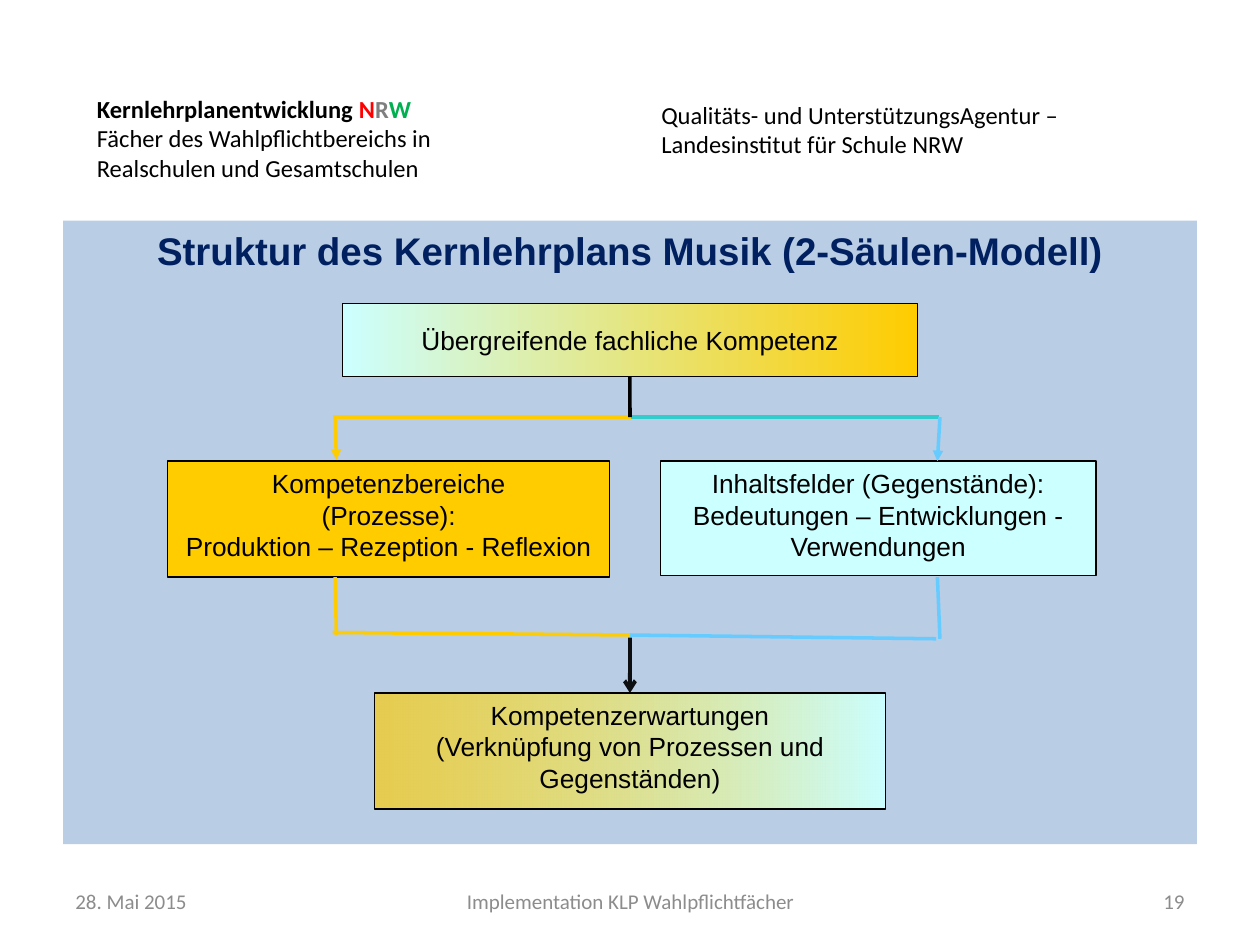
from lxml import etree
from pptx import Presentation
from pptx.dml.color import RGBColor
from pptx.enum.shapes import MSO_CONNECTOR, MSO_SHAPE
from pptx.enum.text import MSO_ANCHOR, PP_ALIGN
from pptx.oxml.ns import qn
from pptx.util import Inches, Pt

STRAIGHT = MSO_CONNECTOR.STRAIGHT
RECT = MSO_SHAPE.RECTANGLE
TOP, MIDDLE = MSO_ANCHOR.TOP, MSO_ANCHOR.MIDDLE
LEFT, CENTER, RIGHT = PP_ALIGN.LEFT, PP_ALIGN.CENTER, PP_ALIGN.RIGHT
BLACK, YELLOW, CYAN, BLUE = "000000", "FFCC00", "CCFFFF", "66CCFF"
TEAL, GREY, NAVY, PANEL = "33CCCC", "8C8C8C", "002060", "B9CDE5"


def rgb(value):
    """Turn a hex string into a colour."""
    return RGBColor.from_string(value)


def set_alpha(element, percent):
    """Make the first colour in an element partly transparent."""
    clr = next(element.iter(qn("a:srgbClr")))
    etree.SubElement(clr, qn("a:alpha"), val=str(percent * 1000))


def write(tf, paragraphs, size=15, font="Arial", color=BLACK, bold=False,
          align=CENTER, anchor=TOP):
    """Write paragraphs, each a string or a list of (text, colour, bold)."""
    tf.word_wrap = True
    tf.vertical_anchor = anchor
    for i, runs in enumerate(paragraphs):
        p = tf.paragraphs[0] if i == 0 else tf.add_paragraph()
        p.alignment = align
        p.space_before = Pt(0)
        if isinstance(runs, str):
            runs = [(runs, color, bold)]
        for text, run_color, run_bold in runs:
            r = p.add_run()
            r.text = text
            r.font.name = font
            r.font.size = Pt(size)
            r.font.bold = run_bold
            r.font.color.rgb = rgb(run_color)


def add_label(s, box, paragraphs, **fmt):
    """Add a text box in Calibri."""
    sp = s.shapes.add_textbox(*map(Inches, box))
    write(sp.text_frame, paragraphs, font="Calibri", anchor=MIDDLE, **fmt)


def add_panel(s, heading):
    """Fill the body placeholder as the panel with its heading."""
    s.shapes.title.element.getparent().remove(s.shapes.title.element)
    sp = s.placeholders[1]
    sp.left, sp.top, sp.width, sp.height = map(Inches, (0.5, 1.75, 9, 4.95))
    sp.fill.solid()
    sp.fill.fore_color.rgb = rgb(PANEL)
    p_pr = sp.text_frame.paragraphs[0]._p.get_or_add_pPr()
    p_pr.set("marL", "0")
    p_pr.set("indent", "0")
    etree.SubElement(p_pr, qn("a:buNone"))
    write(sp.text_frame, [heading], size=22, color=NAVY, bold=True)


def add_box(s, box, paragraphs, colors, alpha=None, anchor=TOP):
    """Add an outlined box with a solid or left-to-right gradient fill."""
    sp = s.shapes.add_shape(RECT, *map(Inches, box))
    sp.shadow.inherit = False
    if len(colors) == 1:
        sp.fill.solid()
        sp.fill.fore_color.rgb = rgb(colors[0])
    else:
        sp.fill.gradient()
        sp.fill.gradient_angle = 0
        for stop, position, color in zip(sp.fill.gradient_stops, (0, 1), colors):
            stop.position = position
            stop.color.rgb = rgb(color)
    if alpha:
        set_alpha(sp._element.spPr, alpha)
    sp.line.color.rgb = rgb(BLACK)
    sp.line.width = Pt(0.75)
    write(sp.text_frame, paragraphs, anchor=anchor)
    return sp


def add_line(s, start, end, color, width=2, head=None, alpha=None):
    """Add a straight connector, with an arrowhead at its end if named."""
    cxn = s.shapes.add_connector(STRAIGHT, *map(Inches, (*start, *end)))
    cxn.line.color.rgb = rgb(color)
    cxn.line.width = Pt(width)
    sp_pr = cxn._element.spPr
    if alpha:
        set_alpha(sp_pr, alpha)
    if head:
        etree.SubElement(cxn.line._get_or_add_ln(), qn("a:tailEnd"), type=head)
    etree.SubElement(sp_pr, qn("a:effectLst"))
    return cxn


def add_header(s):
    """Add the two header texts."""
    add_label(s, (0.67, 0.47, 3.39, 1.25), [
        [("Kernlehrplanentwicklung ", BLACK, True), ("N", "FF0000", True),
         ("R", "7F7F7F", True), ("W", "00B050", True)],
        "Fächer des Wahlpflichtbereichs in",
        "Realschulen und Gesamtschulen"], size=14, align=LEFT)
    add_label(s, (5.15, 0.4, 3.4, 1.25), [
        "Qualitäts- und UnterstützungsAgentur –",
        "Landesinstitut für Schule NRW"], size=14, align=LEFT)


def add_diagram(s):
    """Add the boxes of the two-pillar model and the lines between them."""
    outcome = add_box(s, (2.97, 5.5, 4.06, 0.92), [
        "Kompetenzerwartungen",
        "(Verknüpfung von Prozessen und Gegenständen)"],
        (YELLOW, CYAN), alpha=65)
    add_box(s, (1.33, 3.66, 3.51, 0.92), [
        "Kompetenzbereiche", "(Prozesse):",
        "Produktion – Rezeption - Reflexion"], (YELLOW,))
    goal = add_box(s, (2.72, 2.41, 4.56, 0.58),
                   ["Übergreifende fachliche Kompetenz"],
                   (CYAN, YELLOW), anchor=MIDDLE)
    add_box(s, (5.24, 3.66, 3.46, 0.91), [
        "Inhaltsfelder (Gegenstände):",
        "Bedeutungen – Entwicklungen - Verwendungen"], (CYAN,))

    for start, end, color, head in (
            ((5.01, 3.31), (2.64, 3.31), YELLOW, None),
            ((5.01, 3.31), (7.45, 3.31), TEAL, None),
            ((2.66, 3.31), (2.67, 3.65), YELLOW, "triangle"),
            ((7.46, 3.31), (7.44, 3.66), BLUE, "triangle"),
            ((2.66, 4.58), (2.67, 5.04), YELLOW, None),
            ((7.44, 4.58), (7.46, 5.07), BLUE, None),
            ((2.64, 5.02), (5.01, 5.04), YELLOW, None),
            ((7.43, 5.07), (5, 5.04), BLUE, None)):
        add_line(s, start, end, color, head=head)
    stem = add_line(s, (5, 2.99), (5, 3.31), BLACK)
    stem.begin_connect(goal, 2)
    arrow = add_line(s, (5, 5.06), (5, 5.5), BLACK, 2.25, "arrow", 92)
    arrow.end_connect(outcome, 0)


def add_footer(s):
    """Add the date, the event name and the slide number."""
    for left, width, text, align in (
            (0.5, 2.33, "28. Mai 2015", LEFT),
            (3.42, 3.17, "Implementation KLP Wahlpflichtfächer", CENTER),
            (7.17, 2.33, "19", RIGHT)):
        add_label(s, (left, 6.95, width, 0.4), [text], size=12, color=GREY,
                  align=align)


def main():
    """Build and save the slide."""
    prs = Presentation()
    prs.slide_width, prs.slide_height = Inches(10), Inches(7.5)
    s = prs.slides.add_slide(prs.slide_layouts[1])
    add_header(s)
    add_panel(s, "Struktur des Kernlehrplans Musik (2-Säulen-Modell)")
    add_diagram(s)
    add_footer(s)
    prs.save("out.pptx")


if __name__ == "__main__":
    main()
